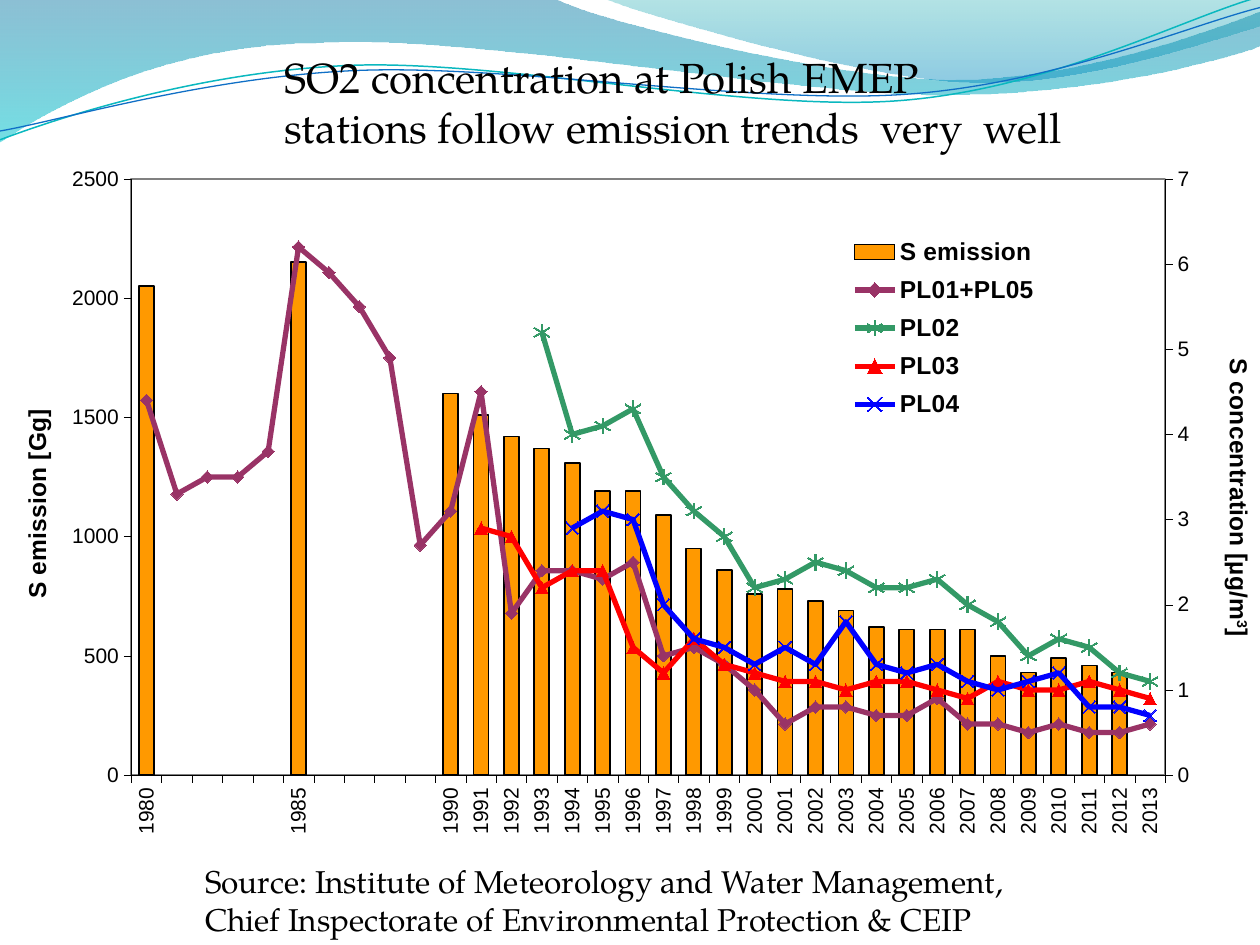
from copy import deepcopy

from lxml import etree
from pptx import Presentation
from pptx.chart.axis import CategoryAxis, ValueAxis
from pptx.chart.data import CategoryChartData
from pptx.dml.color import RGBColor
from pptx.enum.chart import (XL_CHART_TYPE, XL_LEGEND_POSITION,
                             XL_MARKER_STYLE, XL_TICK_MARK)
from pptx.oxml import parse_xml
from pptx.oxml.ns import nsdecls, qn
from pptx.util import Inches, Pt

BARS = XL_CHART_TYPE.COLUMN_CLUSTERED
RIGHT = XL_LEGEND_POSITION.RIGHT
OUT = XL_TICK_MARK.OUTSIDE
NONE = XL_TICK_MARK.NONE
MARK = XL_MARKER_STYLE
WIDE, HIGH = 10, 7.5
SERIF, SANS = "TeX Gyre Pagella", "Arial"

HUES = {
    "ink": "000000", "paper": "FFFFFF", "frame": "808080",
    "deep": "0074A1", "aqua": "00C6CF", "teal": "00A1A9", "sky": "008BBF",
    "cyan": "0AB8BF", "blue": "0F6FC6",
    "bar": "FF9900", "plum": "993366", "green": "339966",
    "red": "FF0000", "pure": "0000FF",
}

# Years with a label; the gaps between early years stay blank
YEARS = (["1980"] + [""] * 4 + ["1985"] + [""] * 4
         + [str(year) for year in range(1990, 2014)])
GAP = [None] * 4
EMIT = [2050, *GAP, 2150, *GAP, 1600, 1510, 1420, 1370, 1310, 1190, 1190,
        1090, 950, 860, 760, 780, 730, 690, 620, 610, 610, 610, 500, 430,
        490, 460, 430, None]

# Station: colour, marker, marker size, values up to the last year
SITES = {
    "PL01+PL05": ("plum", MARK.DIAMOND, 7, [
        4.4, 3.3, 3.5, 3.5, 3.8, 6.2, 5.9, 5.5, 4.9, 2.7, 3.1, 4.5, 1.9, 2.4,
        2.4, 2.3, 2.5, 1.4, 1.5, 1.3, 1, 0.6, 0.8, 0.8, 0.7, 0.7, 0.9, 0.6,
        0.6, 0.5, 0.6, 0.5, 0.5, 0.6]),
    "PL02": ("green", MARK.STAR, 9, [
        5.2, 4, 4.1, 4.3, 3.5, 3.1, 2.8, 2.2, 2.3, 2.5, 2.4, 2.2, 2.2, 2.3,
        2, 1.8, 1.4, 1.6, 1.5, 1.2, 1.1]),
    "PL03": ("red", MARK.TRIANGLE, 7, [
        2.9, 2.8, 2.2, 2.4, 2.4, 1.5, 1.2, 1.6, 1.3, 1.2, 1.1, 1.1, 1, 1.1,
        1.1, 1, 0.9, 1.1, 1, 1, 1.1, 1, 0.9]),
    "PL04": ("pure", MARK.X, 7, [
        2.9, 3.1, 3, 2, 1.6, 1.5, 1.3, 1.5, 1.3, 1.8, 1.3, 1.2, 1.3, 1.1, 1,
        1.1, 1.2, 0.8, 0.8, 0.7]),
}

# Wave outlines in inches: a pair is a corner, a six is a curve
BACK = [(0, -0.01), (4.4, -0.01), (4.76, 0.17, 6.64, 0.63, 7.58, 0.63),
        (8.53, 0.63, 9.58, 0.26, 10, 0.09), (10.01, 0.36),
        (9.83, 0.44, 8.7, 0.76, 7.46, 0.75),
        (6.22, 0.75, 3.82, 0.28, 2.57, 0.34),
        (1.29, 0.35, 0.46, 0.83, -0.01, 1.13)]
FRONT = [(4.79, -0.01), (5.09, 0.11, 6.82, 0.62, 7.69, 0.65),
         (8.56, 0.69, 9.61, 0.32, 10, 0.21), (10, 0)]
UPPER = [(0, 1.11), (0.48, 0.93, 1.58, 0.57, 2.77, 0.52),
         (3.95, 0.47, 5.93, 0.89, 7.13, 0.8),
         (8.33, 0.71, 9.38, 0.15, 9.98, -0.02)]
LOWER = [(0, 1.04), (0.47, 0.96, 1.64, 0.61, 2.83, 0.56),
         (4.03, 0.51, 5.97, 0.83, 7.17, 0.75),
         (8.36, 0.67, 9.41, 0.21, 10, 0.06)]


def hue(name):
    return RGBColor.from_string(HUES[name])


def ink(font, size, bold=False, face=SANS):
    font.name, font.size, font.bold = face, Pt(size), bold
    font.color.rgb = hue("ink")


def stroke(line, name, width):
    line.color.rgb = hue(name)
    line.width = Pt(width)


def outline(slide, steps, close):
    """Build the corners, then bend the sides that are curves."""
    ends = [(Inches(step[-2]), Inches(step[-1])) for step in steps]
    build = slide.shapes.build_freeform(*ends[0])
    build.add_line_segments(ends[1:], close=close)
    shape = build.convert_to_shape()
    shape.shadow.inherit = False
    for side, step in zip(shape._element.xpath(".//a:lnTo"), steps[1:]):
        if len(step) == 6:
            side.tag = qn("a:cubicBezTo")
            for i, (x, y) in enumerate((step[:2], step[2:4])):
                point = etree.Element(qn("a:pt"))
                point.set("x", str(Inches(x) - shape.left))
                point.set("y", str(Inches(y) - shape.top))
                side.insert(i, point)
    return shape


def wave(slide, steps, stops):
    shape = outline(slide, steps, True)
    shape.line.fill.background()
    shape.fill.gradient()
    shape.fill.gradient_angle = 270
    for stop, place, (name, _) in zip(shape.fill.gradient_stops, (0, 1), stops):
        stop.position = place
        stop.color.rgb = hue(name)
    for node, (_, alpha) in zip(shape._element.xpath(".//a:gs/a:srgbClr"), stops):
        etree.SubElement(node, qn("a:alpha")).set("val", str(alpha * 1000))


def strand(slide, steps, name, width):
    shape = outline(slide, steps, False)
    shape.fill.background()
    stroke(shape.line, name, width)


def label(slide, box, text, size):
    frame = slide.shapes.add_textbox(*map(Inches, box)).text_frame
    frame.word_wrap = True
    para = frame.paragraphs[0]
    para.text = text
    ink(para.font, size, face=SERIF)


def place(node, spot, box, inner=False):
    """Fix a chart part at shares of the chart's size."""
    for old in node.findall(qn("c:layout")):
        node.remove(old)
    target = '<c:layoutTarget val="inner"/>' if inner else ""
    modes = '<c:xMode val="edge"/><c:yMode val="edge"/>'
    sizes = "".join(f'<c:{key} val="{val}"/>' for key, val in zip("xywh", box))
    node.insert(spot, parse_xml(
        f'<c:layout {nsdecls("c")}><c:manualLayout>{target}{modes}{sizes}'
        '</c:manualLayout></c:layout>'))


def style(axis):
    axis.has_major_gridlines = False
    axis.major_tick_mark, axis.minor_tick_mark = OUT, NONE
    stroke(axis.format.line, "ink", 0.25)
    ink(axis.tick_labels.font, 12)


def scale(axis, top, unit, words, turn, spot):
    style(axis)
    axis.minimum_scale, axis.maximum_scale, axis.major_unit = 0, top, unit
    axis.tick_labels.number_format = "0"
    axis.tick_labels.number_format_is_linked = False
    title = axis.axis_title
    para = title.text_frame.paragraphs[0]
    for word in words:
        para.add_run().text = word
    ink(para.font, 14, True)
    if len(words) > 1:  # the power is raised
        para.runs[1].font._element.set("baseline", "30000")
    title._element.xpath(".//a:bodyPr")[0].set("rot", str(turn * 60000))
    place(title._element, 1, spot)


def split(chart):
    """Move the stations to lines on a second pair of axes."""
    area = chart._chartSpace.chart.plotArea
    bars = area.find(qn("c:barChart"))
    lines = parse_xml(f'<c:lineChart {nsdecls("c")}><c:grouping val="standard"/>'
                      '<c:varyColors val="0"/><c:marker val="1"/>'
                      '<c:axId val="501"/><c:axId val="502"/></c:lineChart>')
    for i, ser in enumerate(bars.findall(qn("c:ser"))[1:]):
        for flag in ser.findall(qn("c:invertIfNegative")):
            ser.remove(flag)
        lines.insert(2 + i, ser)
    bars.addnext(lines)
    first = area.find(qn("c:valAx"))
    pair = [deepcopy(area.find(qn(tag))) for tag in ("c:catAx", "c:valAx")]
    for node, own, other in zip(pair, ("501", "502"), ("502", "501")):
        node.find(qn("c:axId")).set("val", own)
        node.find(qn("c:crossAx")).set("val", other)
    pair[1].find(qn("c:axPos")).set("val", "r")
    pair[1].find(qn("c:crosses")).set("val", "max")
    first.addnext(pair[1])
    pair[1].addnext(pair[0])
    spare = CategoryAxis(pair[0])
    spare.visible = spare.has_major_gridlines = False
    return ValueAxis(first), ValueAxis(pair[1])


def graph(slide):
    data = CategoryChartData()
    data.categories = YEARS
    data.add_series("S emission", EMIT)
    for name, (_, _, _, vals) in SITES.items():
        data.add_series(name, [None] * (len(YEARS) - len(vals)) + vals)
    box = map(Inches, (-0.02, 1.31, 10.02, 5.51))
    chart = slide.shapes.add_chart(BARS, *box, data).chart
    chart.has_title = False
    ink(chart.font, 10)

    # Axes
    left, right = split(chart)
    base = chart.category_axis
    style(base)
    base._element.xpath("./c:txPr/a:bodyPr")[0].set("rot", "-5400000")
    base._element.find(qn("c:noMultiLvlLbl")).addprevious(
        parse_xml(f'<c:tickLblSkip {nsdecls("c")} val="1"/>'))
    scale(left, 2500, 500, ["S emission [Gg]"], -90, (0.015, 0.345))
    scale(right, 7, 1, ["S concentration [µg/m", "3", "]"], 90, (0.967, 0.273))

    # Series
    bars, lines = chart.plots
    bars.gap_width, bars.vary_by_categories = 103, False
    look = bars.series[0].format
    look.fill.solid()
    look.fill.fore_color.rgb = hue("bar")
    stroke(look.line, "ink", 1)
    for ser, (name, mark, size, _) in zip(lines.series, SITES.values()):
        ser.smooth = False
        stroke(ser.format.line, name, 3)
        ser.marker.style, ser.marker.size = mark, size
        look = ser.marker.format
        stroke(look.line, name, 0.75)
        if mark == MARK.STAR:
            look.fill.background()
        else:
            look.fill.solid()
            look.fill.fore_color.rgb = hue(name)

    # Legend and plot area
    chart.has_legend = True
    legend = chart.legend
    legend.position, legend.include_in_layout = RIGHT, False
    ink(legend.font, 14, True)
    place(legend._element, 1, (0.67, 0.09, 0.16, 0.29))
    area = chart._chartSpace.chart.plotArea
    place(area, 0, (0.106, 0.02, 0.819, 0.859), True)
    area.append(parse_xml(
        f'<c:spPr {nsdecls("c", "a")}><a:solidFill><a:srgbClr val="{HUES["paper"]}"/>'
        f'</a:solidFill><a:ln w="12700"><a:solidFill><a:srgbClr val="{HUES["frame"]}"/>'
        '</a:solidFill></a:ln></c:spPr>'))


def main():
    deck = Presentation()
    deck.slide_width, deck.slide_height = Inches(WIDE), Inches(HIGH)
    slide = deck.slides.add_slide(deck.slide_layouts[6])

    # Waves along the top
    wave(slide, BACK, [("deep", 45), ("aqua", 55)])
    wave(slide, FRONT, [("teal", 30), ("sky", 45)])
    strand(slide, UPPER, "cyan", 0.85)
    strand(slide, LOWER, "blue", 0.75)

    # Heading, source and chart
    label(slide, (2.16, 0.36, 6.38, 0.91),
          "SO2 concentration at Polish EMEP stations follow emission trends  very  well", 24)
    label(slide, (1.53, 6.79, 6.97, 0.71),
          "Source: Institute of Meteorology and Water Management, "
          "Chief Inspectorate of Environmental Protection & CEIP", 18)
    graph(slide)
    deck.save("out.pptx")


if __name__ == "__main__":
    main()
